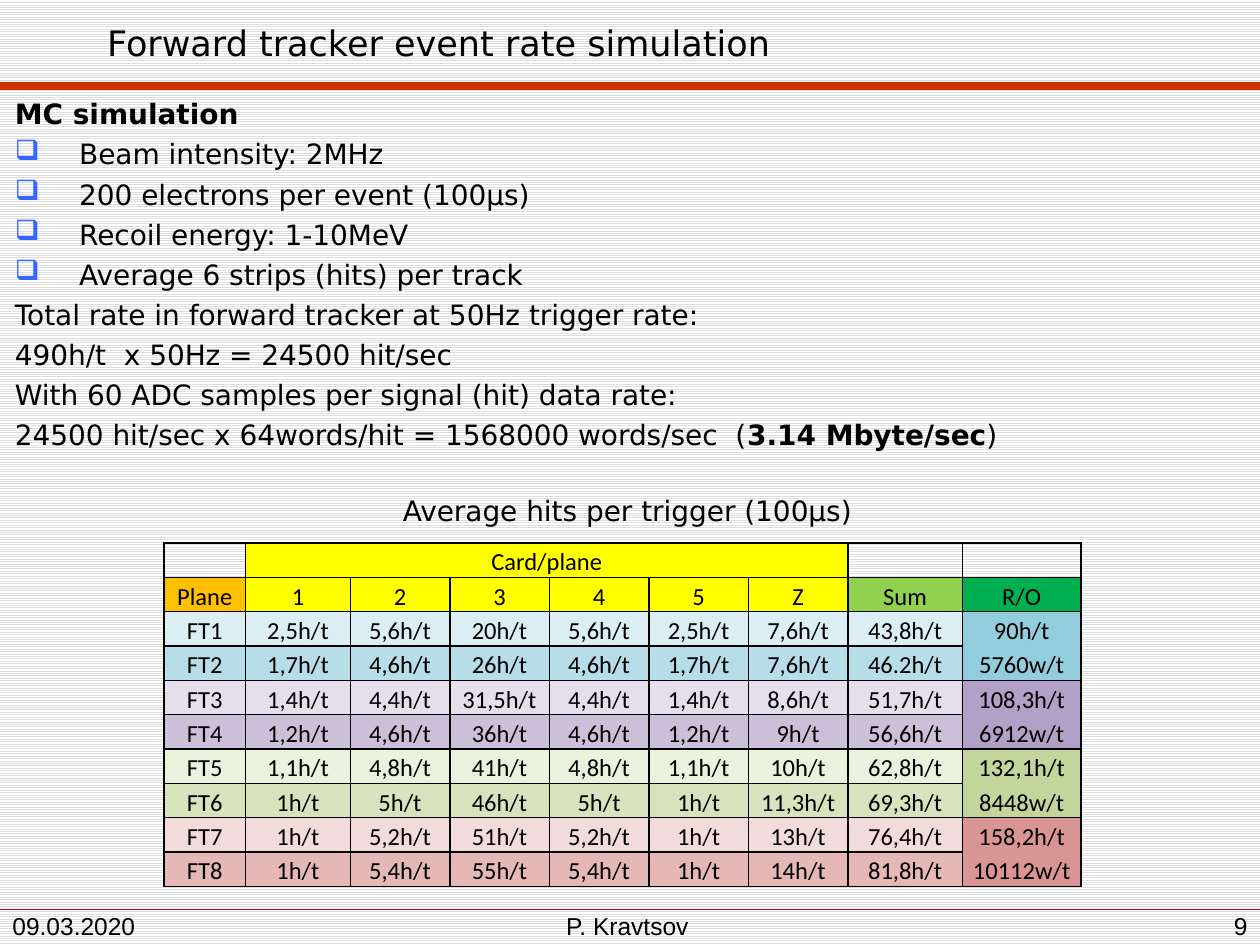
from lxml.etree import SubElement
from pptx import Presentation
from pptx.dml.color import RGBColor as RGB
from pptx.enum.dml import MSO_PATTERN as Pattern
from pptx.enum.shapes import MSO_CONNECTOR as Conn
from pptx.enum.text import MSO_ANCHOR as Anchor, MSO_AUTO_SIZE as Auto, PP_ALIGN as Align
from pptx.oxml.ns import qn
from pptx.util import Inches, Pt

COLS, ROWS = 100, 75
CELL = Inches(0.1)

COLORS = {
    "black": "000000", "white": "FFFFFF", "stripe": "DDDDDD",
    "rule": "CC3300", "thin": "CC0000", "bullet": "3366FF",
    "card": "FFFF00", "plane": "FFC000", "sum": "92D050", "readout": "00B050",
}
TITLE = {"name": "DejaVu Sans", "size": Pt(20), "bold": False}
BODY = {"name": "DejaVu Sans", "size": Pt(16), "bold": False}
STRONG = {**BODY, "bold": True}
FOOT = {"name": "Arial", "size": Pt(14), "bold": False}
TABLE = {"name": "Calibri", "size": Pt(14), "bold": False}
BOX = {"word_wrap": True, "auto_size": Auto.NONE, "vertical_anchor": Anchor.TOP}
FOOT_BOX = {**BOX, "vertical_anchor": Anchor.BOTTOM, "margin_bottom": Inches(0.04)}
CELL_BOX = {"margin_left": Inches(0.07), "margin_right": Inches(0.07),
            "margin_top": 0, "margin_bottom": 0}
CENTER = {"alignment": Align.CENTER}
SPACED = {"space_before": Pt(3.7)}

BODY_LINES = [
    (False, [("MC simulation", STRONG)]),
    (True, [("Beam intensity: 2MHz", BODY)]),
    (True, [("200 electrons per event (100μs)", BODY)]),
    (True, [("Recoil energy: 1-10MeV", BODY)]),
    (True, [("Average 6 strips (hits) per track", BODY)]),
    (False, [("Total rate in forward tracker at 50Hz trigger rate:", BODY)]),
    (False, [("490h/t  x 50Hz = 24500 hit/sec", BODY)]),
    (False, [("With 60 ADC samples per signal (hit) data rate:", BODY)]),
    (False, [("24500 hit/sec х 64words/hit = 1568000 words/sec  (", BODY),
             ("3.14 Mbyte/sec", STRONG), (")", BODY)]),
]
FOOTERS = [
    ("P. Kravtsov", (31.1, 72.5, 37.4, 2.5), Align.CENTER),
    ("09.03.2020", (0, 72.2, 18.1, 2.8), Align.LEFT),
    ("9", (76.7, 71.8, 23.3, 3.2), Align.RIGHT),
]
COL_WIDTHS = [6.5, 8.3] + [7.9] * 5 + [9.1, 9.4]
HEADER = ["Plane", "1", "2", "3", "4", "5", "Z", "Sum", "R/O"]
HEADER_FILLS = ["plane"] + ["card"] * 6 + ["sum", "readout"]
HITS = [
    ("DAEEF3", "2,5 5,6 20 5,6 2,5 7,6 43,8"),
    ("B6DDE8", "1,7 4,6 26 4,6 1,7 7,6 46.2"),
    ("E5DFEC", "1,4 4,4 31,5 4,4 1,4 8,6 51,7"),
    ("CCC0D9", "1,2 4,6 36 4,6 1,2 9 56,6"),
    ("EAF1DD", "1,1 4,8 41 4,8 1,1 10 62,8"),
    ("D6E3BC", "1 5 46 5 1 11,3 69,3"),
    ("F2DBDB", "1 5,2 51 5,2 1 13 76,4"),
    ("E5B8B7", "1 5,4 55 5,4 1 14 81,8"),
]
READOUT = [
    ("92CDDC", "90h/t", "5760w/t"),
    ("B2A1C7", "108,3h/t", "6912w/t"),
    ("C2D69B", "132,1h/t", "8448w/t"),
    ("D99594", "158,2h/t", "10112w/t"),
]


def grid(*units):
    return [round(u * CELL) for u in units]


def color(name):
    return RGB.from_string(COLORS.get(name, name))


def apply(obj, values):
    for key, value in values.items():
        setattr(obj, key, value)


def add_runs(p, runs):
    for text, font in runs:
        r = p.add_run()
        r.text = text
        apply(r.font, font)
        r.font.color.rgb = color("black")


def add_bullet(p):
    pPr = p._p.get_or_add_pPr()
    pPr.set("marL", str(Inches(0.51)))
    pPr.set("indent", str(-Inches(0.51)))
    clr = SubElement(pPr, qn("a:buClr"))
    SubElement(clr, qn("a:srgbClr"), val=COLORS["bullet"])
    SubElement(pPr, qn("a:buChar"), char="❑")


def add_text(s, at, lines, box, para):
    tf = s.shapes.add_textbox(*grid(*at)).text_frame
    apply(tf, box)
    for i, (bulleted, runs) in enumerate(lines):
        p = tf.add_paragraph() if i else tf.paragraphs[0]
        apply(p, para)
        if i:
            apply(p, SPACED)
        if bulleted:
            add_bullet(p)
        add_runs(p, runs)


def add_title(s, at, text):
    sp = s.shapes.title
    apply(sp, dict(zip(("left", "top", "width", "height"), grid(*at))))
    tf = sp.text_frame
    apply(tf, {**BOX, "vertical_anchor": Anchor.MIDDLE})
    p = tf.paragraphs[0]
    p.alignment = Align.LEFT
    add_runs(p, [(text, TITLE)])


def add_rule(s, y, name, weight):
    line = s.shapes.add_connector(Conn.STRAIGHT, *grid(0, y, COLS, y))
    line.line.color.rgb = color(name)
    line.line.width = Pt(weight)
    SubElement(line._element.spPr, qn("a:effectLst"))


def format_cell(cell):
    apply(cell, CELL_BOX)
    tcPr = cell._tc.get_or_add_tcPr()
    for side in ("lnL", "lnR", "lnT", "lnB"):
        ln = SubElement(tcPr, qn(f"a:{side}"), w=str(Pt(1)))
        fill = SubElement(ln, qn("a:solidFill"))
        SubElement(fill, qn("a:srgbClr"), val=COLORS["black"])
    cell.fill.background()
    end = cell.text_frame.paragraphs[0]._p.get_or_add_endParaRPr()
    end.set("sz", "1400")


def fill_cell(cell, fill, *lines):
    cell.fill.solid()
    cell.fill.fore_color.rgb = color(fill)
    tf = cell.text_frame
    for i, text in enumerate(lines):
        p = tf.add_paragraph() if i else tf.paragraphs[0]
        apply(p, {**CENTER, "line_spacing": 1.15})
        add_runs(p, [(text, TABLE)])


def add_hits_table(s, at):
    n_rows, n_cols = len(HITS) + 2, len(HEADER)
    table = s.shapes.add_table(n_rows, n_cols, *grid(*at)).table
    apply(table, {"first_row": False, "horz_banding": False})
    for col, width in zip(table.columns, grid(*COL_WIDTHS)):
        col.width = width
    for row in table.rows:
        row.height = grid(2.72)[0]
    for cell in table.iter_cells():
        format_cell(cell)

    table.cell(0, 1).merge(table.cell(0, 6))
    fill_cell(table.cell(0, 1), "card", "Card/plane")
    for c, (text, fill) in enumerate(zip(HEADER, HEADER_FILLS)):
        fill_cell(table.cell(1, c), fill, text)
    for i, (fill, values) in enumerate(HITS, 1):
        texts = [f"FT{i}"] + [f"{v}h/t" for v in values.split()]
        for c, text in enumerate(texts):
            fill_cell(table.cell(i + 1, c), fill, text)
    last = n_cols - 1
    for i, (fill, *lines) in enumerate(READOUT):
        top = 2 + 2 * i
        table.cell(top, last).merge(table.cell(top + 1, last))
        fill_cell(table.cell(top, last), fill, *lines)


def add_background(s):
    fill = s.background.fill
    fill.patterned()
    fill.pattern = Pattern.LIGHT_HORIZONTAL
    fill.fore_color.rgb = color("stripe")
    fill.back_color.rgb = color("white")


def main():
    prs = Presentation()
    prs.slide_width, prs.slide_height = grid(COLS, ROWS)
    s = prs.slides.add_slide(prs.slide_layouts[5])
    add_background(s)
    add_rule(s, 72.2, "thin", 0.25)
    add_rule(s, 6.8, "rule", 4.5)
    add_title(s, (7.5, 0.4, 89.9, 6), "Forward tracker event rate simulation")
    for text, at, align in FOOTERS:
        add_text(s, at, [(False, [(text, FOOT)])], FOOT_BOX, {"alignment": align})
    add_hits_table(s, (13, 43.1, sum(COL_WIDTHS), 27.2))
    add_text(s, (0.2, 7.2, 88.8, 30.3), BODY_LINES, BOX, {"alignment": Align.LEFT})
    caption = [(False, [("Average hits per trigger (100μs)", BODY)])]
    add_text(s, (24.4, 38.7, 50.8, 3.5), caption, BOX, CENTER)
    prs.save("out.pptx")


if __name__ == "__main__":
    main()
